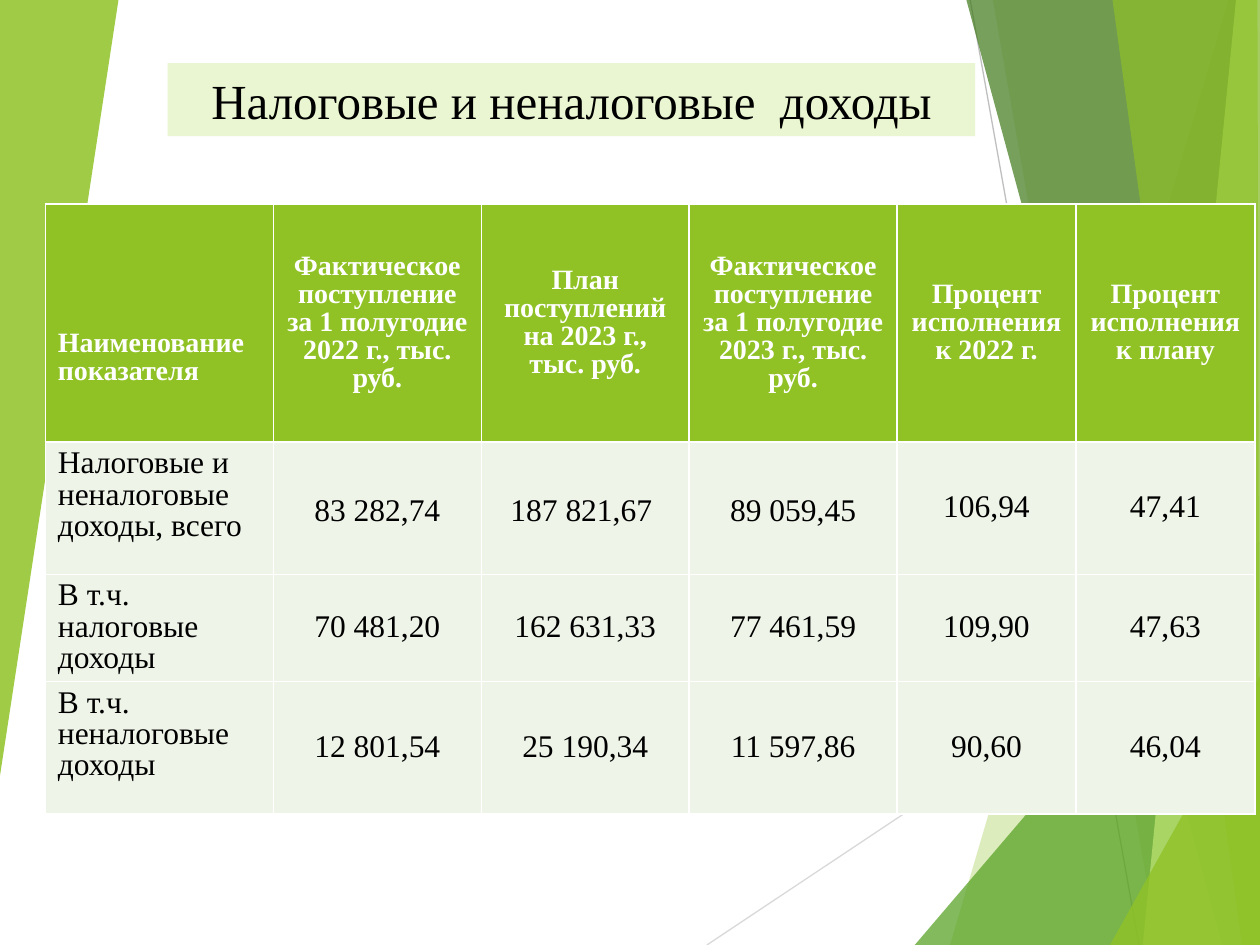
from dataclasses import dataclass

from lxml.etree import SubElement
from pptx import Presentation
from pptx.dml.color import RGBColor
from pptx.enum.shapes import MSO_CONNECTOR, MSO_SHAPE
from pptx.enum.text import MSO_ANCHOR, PP_ALIGN
from pptx.oxml.ns import qn
from pptx.util import Inches, Pt

FONT = "Times New Roman"
GREEN = "90C226"
WHITE = "FFFFFF"
BLACK = "000000"
BODY_FILL = "EEF4E8"


@dataclass
class Facet:
    points: list[tuple[float, float]]
    color: str
    opacity: int


@dataclass
class Ray:
    start: tuple[float, float]
    end: tuple[float, float]
    color: str


RAYS = [
    Ray((5.61, 7.5), (10.01, 4.57), "D9D9D9"),
    Ray((7.7, 0), (9.04, 7.5), "BFBFBF"),
]
FACETS = [
    Facet([(9.75, 0), (7.54, 7.5), (10.01, 7.5), (10.01, 0)], GREEN, 30),
    Facet([(7.88, 0), (9.19, 7.5), (10.01, 7.5), (10.01, 0)], GREEN, 20),
    Facet([(7.26, 7.5), (10, 4.29), (10.01, 7.5)], "54A021", 72),
    Facet([(7.67, 0), (9.7, 7.5), (10.01, 7.5), (10.01, 0)], "3F7819", 70),
    Facet([(9.81, 0), (9.07, 7.5), (10.01, 7.5), (10, 0)], "C0E474", 70),
    Facet([(8.83, 0), (9.86, 7.5), (10, 7.5), (9.98, 0)], GREEN, 65),
    Facet([(8.81, 7.5), (10.01, 5.35), (10.01, 7.5)], GREEN, 80),
    Facet([(-0.01, 0), (0.94, 0), (-0.01, 6.22)], GREEN, 85),
]

COLUMN_WIDTHS = [1.81, 1.65, 1.65, 1.65, 1.42, 1.42]
ROW_HEIGHTS = [1.89, 1.05, 0.85, 1.05]
ROWS = [
    ["Наименование показателя",
     "Фактическое поступление за 1 полугодие 2022 г., тыс. руб.",
     "План поступлений на 2023 г., тыс. руб.",
     "Фактическое поступление за 1 полугодие 2023 г., тыс. руб.",
     "Процент исполнения к 2022 г.",
     "Процент исполнения к плану"],
    ["Налоговые и неналоговые доходы, всего",
     "83 282,74", "187 821,67 ", "89 059,45", "106,94", "47,41"],
    ["В т.ч. налоговые доходы",
     "70 481,20", "162 631,33", "77 461,59", "109,90", "47,63"],
    ["В т.ч. неналоговые доходы",
     "12 801,54", "25 190,34", "11 597,86", "90,60", "46,04"],
]


def rgb(color: str) -> RGBColor:
    return RGBColor.from_string(color)


def fill_solid(target, color: str) -> None:
    target.fill.solid()
    target.fill.fore_color.rgb = rgb(color)


def write_text(text_frame, text: str, *, size: float, color: str = BLACK,
               bold: bool = False, align=PP_ALIGN.CENTER,
               line_spacing: float = 1.0) -> None:
    text_frame.word_wrap = True
    paragraph = text_frame.paragraphs[0]
    paragraph.alignment = align
    paragraph.line_spacing = line_spacing
    run = paragraph.add_run()
    run.text = text
    run.font.name = FONT
    run.font.size = Pt(size)
    run.font.bold = bold
    run.font.color.rgb = rgb(color)


def draw_ray(slide, ray: Ray) -> None:
    connector = slide.shapes.add_connector(
        MSO_CONNECTOR.STRAIGHT, *(Inches(value) for value in ray.start + ray.end))
    connector.line.color.rgb = rgb(ray.color)
    connector.line.width = Pt(0.75)
    SubElement(connector.element.spPr, qn("a:effectLst"))


def draw_facet(slide, facet: Facet) -> None:
    first, *others = [(Inches(x), Inches(y)) for x, y in facet.points]
    builder = slide.shapes.build_freeform(*first)
    builder.add_line_segments(others, close=True)
    shape = builder.convert_to_shape()
    shape.shadow.inherit = False
    shape.line.fill.background()
    fill_solid(shape, facet.color)
    color_element = shape.element.spPr.find(qn("a:solidFill"))[0]
    SubElement(color_element, qn("a:alpha"), val=str(facet.opacity * 1000))


def draw_title(slide) -> None:
    title = slide.shapes.add_shape(
        MSO_SHAPE.RECTANGLE, Inches(1.33), Inches(0.5), Inches(6.41), Inches(0.58))
    title.shadow.inherit = False
    title.line.fill.background()
    fill_solid(title, "EAF6D1")
    title.text_frame.vertical_anchor = MSO_ANCHOR.MIDDLE
    write_text(title.text_frame, "Налоговые и неналоговые  доходы", size=28)


def add_borders(cell) -> None:
    """Draw thin white borders; they must precede the fill in the cell's XML."""
    properties = cell._tc.get_or_add_tcPr()
    for position, side in enumerate(("lnL", "lnR", "lnT", "lnB")):
        border = SubElement(properties, qn(f"a:{side}"), w=str(Pt(1)))
        properties.insert(position, border)
        fill = SubElement(border, qn("a:solidFill"))
        SubElement(fill, qn("a:srgbClr"), val=WHITE)


def draw_table(slide) -> None:
    table = slide.shapes.add_table(
        len(ROWS), len(COLUMN_WIDTHS), Inches(0.36), Inches(1.62),
        Inches(sum(COLUMN_WIDTHS)), Inches(sum(ROW_HEIGHTS))).table
    for column, width in zip(table.columns, COLUMN_WIDTHS):
        column.width = Inches(width)
    for row, height in zip(table.rows, ROW_HEIGHTS):
        row.height = Inches(height)
    for row_index, texts in enumerate(ROWS):
        for column_index, text in enumerate(texts):
            cell = table.cell(row_index, column_index)
            is_header = row_index == 0
            is_name = column_index == 0
            is_total = row_index == 1 and column_index in (1, 2, 3)
            fill_solid(cell, GREEN if is_header else BODY_FILL)
            add_borders(cell)
            cell.vertical_anchor = (
                MSO_ANCHOR.TOP if is_name and not is_header else MSO_ANCHOR.MIDDLE)
            write_text(cell.text_frame, text,
                       size=16 if is_header else 18,
                       color=WHITE if is_header else BLACK,
                       bold=is_header,
                       align=PP_ALIGN.LEFT if is_name else PP_ALIGN.CENTER,
                       line_spacing=1.15 if is_total else 0.9)
    table.cell(0, 0).margin_top = Inches(0.6)


def main() -> None:
    presentation = Presentation()
    presentation.slide_width = Inches(10)
    presentation.slide_height = Inches(7.5)
    slide = presentation.slides.add_slide(presentation.slide_layouts[6])
    for ray in RAYS:
        draw_ray(slide, ray)
    for facet in FACETS:
        draw_facet(slide, facet)
    draw_title(slide)
    draw_table(slide)
    presentation.save("out.pptx")


if __name__ == "__main__":
    main()
